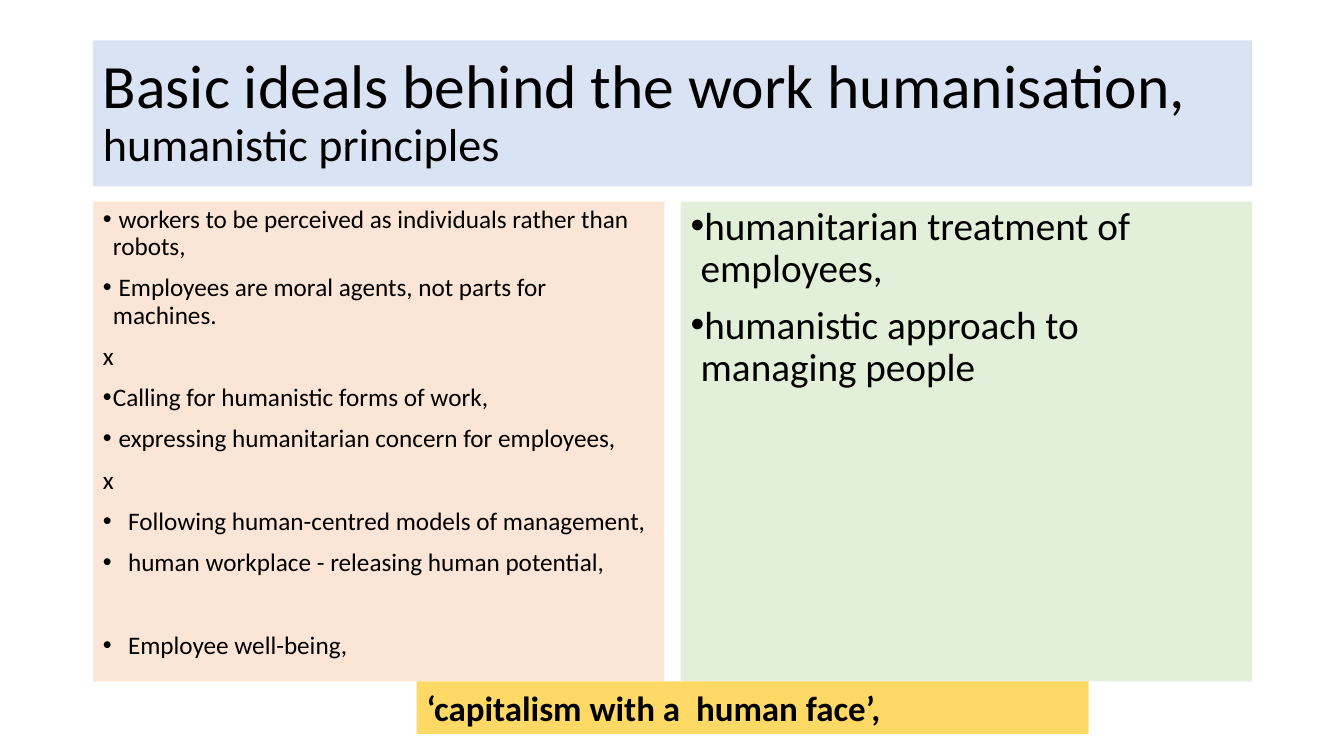
from dataclasses import dataclass

from lxml import etree
from pptx import Presentation, util as u
from pptx.dml.color import RGBColor
from pptx.enum import text
from pptx.oxml.ns import qn

WIDTH, HEIGHT = 13.33, 7.5
MARGIN, CONTENT_W, GUTTER = 0.92, 11.5, 0.16
COLUMN_W = (CONTENT_W - GUTTER) / 2
TITLE_TOP, TITLE_H = 0.4, 1.45
PANEL_TOP, PANEL_H = 2, 4.76
BANNER_LEFT, BANNER_W, BANNER_H = 0.31 * WIDTH, 0.5 * WIDTH, 0.52


@dataclass(frozen=True)
class Theme:
    font: str = "Calibri"
    ink: str = "000000"
    title_fill: str = "DAE3F3"
    left_fill: str = "FBE5D6"
    right_fill: str = "E2F0D9"
    banner_fill: str = "FFD966"
    title_size: int = 44
    subtitle_size: int = 33
    left_size: int = 18
    right_size: int = 28
    banner_size: int = 25
    line_spacing: float = 0.9
    gap: int = 10
    wide_gap: int = 40


THEME = Theme()
NARROW, WIDE, PLAIN = 0.1, 0.25, 0

# Each item: hanging indent in inches (PLAIN has no bullet), space before, wording
IDEALS = [
    (NARROW, THEME.gap, " workers to be perceived as individuals rather than robots,"),
    (NARROW, THEME.gap, " Employees are moral agents, not parts for machines."),
    (PLAIN, THEME.gap, "x"),
    (NARROW, THEME.gap, "Calling for humanistic forms of work,"),
    (NARROW, THEME.gap, " expressing humanitarian concern for employees,"),
    (PLAIN, THEME.gap, "x"),
    (WIDE, THEME.gap, "Following human-centred models of management,"),
    (WIDE, THEME.gap, "human workplace - releasing human potential,"),
    (WIDE, THEME.wide_gap, "Employee well-being,"),
]
TREATMENT = [
    (NARROW, THEME.gap, "humanitarian treatment of employees,"),
    (NARROW, THEME.gap, "humanistic approach to managing people"),
]


def set_all(obj, values):
    for name, value in values.items():
        setattr(obj, name, value)


def frame(sp, box, fill, anchor):
    """Place and fill a shape, and return its text frame."""
    set_all(sp, dict(zip(("left", "top", "width", "height"), map(u.Inches, box))))
    sp.fill.solid()
    sp.fill.fore_color.rgb = RGBColor.from_string(fill)
    tf = sp.text_frame
    set_all(tf, {"word_wrap": True, "auto_size": text.MSO_AUTO_SIZE.NONE,
                 "vertical_anchor": anchor})
    return tf


def add_run(p, words, size, bold=False):
    r = p.add_run()
    r.text = words
    set_all(r.font, {"name": THEME.font, "size": u.Pt(size), "bold": bold})
    r.font.color.rgb = RGBColor.from_string(THEME.ink)


def fill_title(sp):
    box = (MARGIN, TITLE_TOP, CONTENT_W, TITLE_H)
    p = frame(sp, box, THEME.title_fill, text.MSO_ANCHOR.MIDDLE).paragraphs[0]
    set_all(p, {"alignment": text.PP_ALIGN.LEFT, "line_spacing": THEME.line_spacing})
    add_run(p, "Basic ideals behind the work humanisation,", THEME.title_size)
    p.add_line_break()
    add_run(p, "humanistic principles", THEME.subtitle_size)


def fill_panel(sp, column, fill, size, items):
    box = (MARGIN + column * (COLUMN_W + GUTTER), PANEL_TOP, COLUMN_W, PANEL_H)
    tf = frame(sp, box, fill, text.MSO_ANCHOR.TOP)
    for i, (indent, gap, words) in enumerate(items):
        p = tf.add_paragraph() if i else tf.paragraphs[0]
        set_all(p, {"line_spacing": THEME.line_spacing, "space_before": u.Pt(gap)})
        props = p._p.get_or_add_pPr()
        props.set("marL", str(u.Inches(indent)))
        props.set("indent", str(-u.Inches(indent)))
        if indent == PLAIN:
            etree.SubElement(props, qn("a:buNone"))
        else:
            etree.SubElement(props, qn("a:buFont"), typeface="Arial")
            etree.SubElement(props, qn("a:buChar"), char="•")
        add_run(p, words, size)


def add_banner(s):
    box = (BANNER_LEFT, PANEL_TOP + PANEL_H, BANNER_W, BANNER_H)
    sp = s.shapes.add_textbox(*map(u.Inches, box))
    tf = frame(sp, box, THEME.banner_fill, text.MSO_ANCHOR.TOP)
    tf.auto_size = text.MSO_AUTO_SIZE.SHAPE_TO_FIT_TEXT
    add_run(tf.paragraphs[0], "‘capitalism with a  human face’,", THEME.banner_size, bold=True)


def main():
    prs = Presentation()
    set_all(prs, {"slide_width": u.Inches(WIDTH), "slide_height": u.Inches(HEIGHT)})
    s = prs.slides.add_slide(prs.slide_layouts.get_by_name("Two Content"))
    title, left, right = s.placeholders
    fill_title(title)
    fill_panel(left, 0, THEME.left_fill, THEME.left_size, IDEALS)
    fill_panel(right, 1, THEME.right_fill, THEME.right_size, TREATMENT)
    add_banner(s)
    prs.save("out.pptx")


if __name__ == "__main__":
    main()
